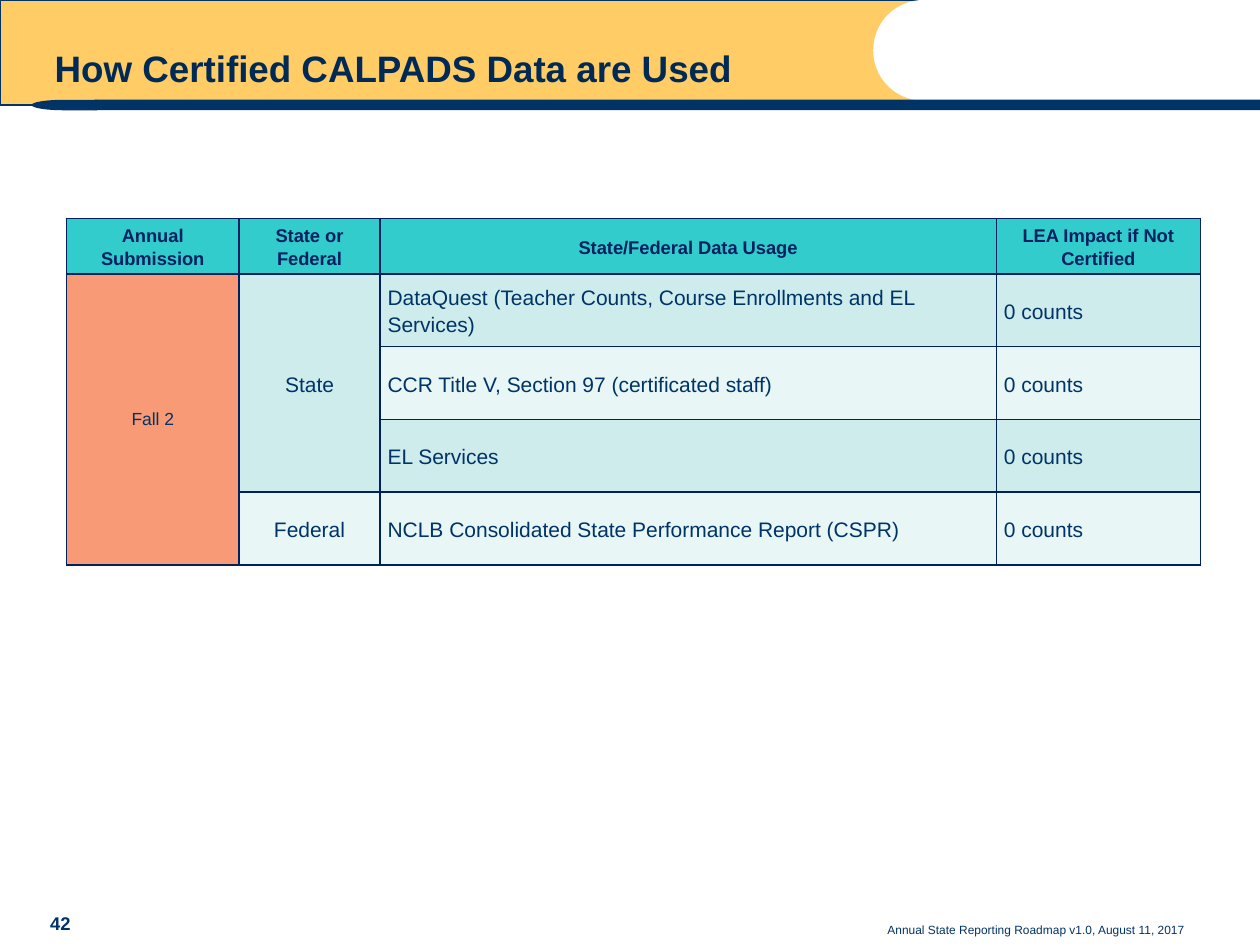
"""Build the slide on how certified CALPADS data are used."""
from dataclasses import dataclass

from lxml.etree import SubElement
from pptx import Presentation
from pptx.dml.color import RGBColor
from pptx.enum.shapes import MSO_SHAPE
from pptx.enum.text import MSO_ANCHOR, MSO_AUTO_SIZE, PP_ALIGN
from pptx.oxml.ns import qn
from pptx.util import Pt

WHITE = RGBColor(0xFF, 0xFF, 0xFF)
GOLD = RGBColor(0xFF, 0xCC, 0x66)
BLUE = RGBColor(0x00, 0x33, 0x66)
TITLE_BLUE = RGBColor(0x00, 0x2A, 0x56)
NAVY = RGBColor(0x00, 0x20, 0x60)
TURQUOISE = RGBColor(0x33, 0xCC, 0xCC)
SALMON = RGBColor(0xF7, 0x9A, 0x75)
AQUA = RGBColor(0xCE, 0xEC, 0xEC)
PALE_AQUA = RGBColor(0xE8, 0xF6, 0xF6)

COLUMN_WIDTHS = (98.6, 80.6, 352.2, 116.6)
ROW_HEIGHTS = (31.7, 41.6, 41.6, 41.6, 41.6)
HEADERS = (
    "Annual Submission",
    "State or Federal",
    "State/Federal Data Usage",
    "LEA Impact if Not Certified",
)
USAGES = (
    "DataQuest (Teacher Counts, Course Enrollments and EL Services)",
    "CCR Title V, Section 97 (certificated staff)",
    "EL Services",
    "NCLB Consolidated State Performance Report (CSPR)",
)
IMPACT = "0 counts"


@dataclass(frozen=True)
class Decoration:
    kind: MSO_SHAPE
    left: float
    top: float
    width: float
    height: float
    fill: RGBColor
    line: RGBColor | None = None
    rotation: float = 0


@dataclass(frozen=True)
class Entry:
    row: int
    column: int
    text: str
    fill: RGBColor
    size: float = 12
    color: RGBColor = BLUE
    bold: bool = False
    align: PP_ALIGN = PP_ALIGN.LEFT
    spacing: float = 1.15
    row_span: int = 1


DECORATIONS = (
    Decoration(MSO_SHAPE.RECTANGLE, 0, 0, 528, 60, GOLD, BLUE),
    Decoration(MSO_SHAPE.OVAL, 499, 0, 57.6, 57.6, WHITE),
    Decoration(MSO_SHAPE.RECTANGLE, 54, 57, 666, 6, BLUE),
    Decoration(MSO_SHAPE.FLOWCHART_DELAY, 18, 57, 37.4, 6, BLUE, rotation=180),
)


def write_text(frame, text: str, *, size: float, color: RGBColor, bold: bool = False,
               align: PP_ALIGN = PP_ALIGN.LEFT, spacing: float = 1.0) -> None:
    para = frame.paragraphs[0]
    para.alignment = align
    para.line_spacing = spacing
    span = para.add_run()
    span.text = text
    span.font.name = "Arial"
    span.font.size = Pt(size)
    span.font.bold = bold
    span.font.color.rgb = color


def draw_decoration(page, item: Decoration) -> None:
    shape = page.shapes.add_shape(
        item.kind, Pt(item.left), Pt(item.top), Pt(item.width), Pt(item.height))
    shape.shadow.inherit = False
    shape.rotation = item.rotation
    shape.fill.solid()
    shape.fill.fore_color.rgb = item.fill
    if item.line is None:
        shape.line.fill.background()
    else:
        shape.line.color.rgb = item.line
        shape.line.width = Pt(0.75)


def add_title(page, text: str) -> None:
    title = page.shapes.title
    page.shapes._spTree.append(title._element)
    title.left, title.top, title.width, title.height = Pt(24), Pt(13.7), Pt(432), Pt(41.8)
    frame = title.text_frame
    frame.word_wrap = True
    frame.auto_size = MSO_AUTO_SIZE.NONE
    frame.vertical_anchor = MSO_ANCHOR.BOTTOM
    write_text(frame, text, size=21, color=TITLE_BLUE, bold=True, spacing=0.9)


def add_footer(page, text: str, left: float, top: float, width: float, height: float,
               **text_format) -> None:
    box = page.shapes.add_textbox(Pt(left), Pt(top), Pt(width), Pt(height))
    frame = box.text_frame
    frame.word_wrap = True
    frame.vertical_anchor = MSO_ANCHOR.BOTTOM
    write_text(frame, text, color=BLUE, **text_format)


def style_cell(cell, fill: RGBColor) -> None:
    properties = cell._tc.get_or_add_tcPr()
    for side in ("a:lnL", "a:lnR", "a:lnT", "a:lnB"):
        line = SubElement(properties, qn(side), w=str(Pt(1)))
        SubElement(SubElement(line, qn("a:solidFill")), qn("a:srgbClr"), val=str(NAVY))
    cell.fill.solid()
    cell.fill.fore_color.rgb = fill
    cell.vertical_anchor = MSO_ANCHOR.MIDDLE
    cell.margin_left = cell.margin_right = Pt(4.3)
    cell.margin_top = cell.margin_bottom = 0


def table_entries() -> list[Entry]:
    center = PP_ALIGN.CENTER
    entries = [
        Entry(0, column, text, TURQUOISE, size=10.5, color=NAVY, bold=True, align=center)
        for column, text in enumerate(HEADERS)
    ]
    entries += [
        Entry(1, 0, "Fall 2", SALMON, size=10, align=center, spacing=1.0, row_span=4),
        Entry(1, 1, "State", AQUA, align=center, row_span=3),
        Entry(4, 1, "Federal", PALE_AQUA, align=center),
    ]
    for row, usage in enumerate(USAGES, start=1):
        fill = AQUA if row % 2 else PALE_AQUA
        entries += [Entry(row, 2, usage, fill), Entry(row, 3, IMPACT, fill)]
    return entries


def add_usage_table(page) -> None:
    table = page.shapes.add_table(
        len(ROW_HEIGHTS), len(COLUMN_WIDTHS), Pt(38), Pt(124.8),
        Pt(sum(COLUMN_WIDTHS)), Pt(sum(ROW_HEIGHTS))).table
    for column, width in zip(table.columns, COLUMN_WIDTHS):
        column.width = Pt(width)
    for row, height in zip(table.rows, ROW_HEIGHTS):
        row.height = Pt(height)
    for entry in table_entries():
        last_row = entry.row + entry.row_span - 1
        for row in range(entry.row, last_row + 1):
            style_cell(table.cell(row, entry.column), entry.fill)
        cell = table.cell(entry.row, entry.column)
        if entry.row_span > 1:
            cell.merge(table.cell(last_row, entry.column))
        write_text(cell.text_frame, entry.text, size=entry.size, color=entry.color,
                   bold=entry.bold, align=entry.align, spacing=entry.spacing)


def main() -> None:
    deck = Presentation()
    deck.slide_width, deck.slide_height = Pt(720), Pt(540)
    page = deck.slides.add_slide(deck.slide_layouts[5])
    for item in DECORATIONS:
        draw_decoration(page, item)
    add_usage_table(page)
    add_title(page, "How Certified CALPADS Data are Used")
    add_footer(page, "Annual State Reporting Roadmap v1.0, August 11, 2017",
               300, 510, 384, 28.8, size=6.8, align=PP_ALIGN.RIGHT)
    add_footer(page, "42", 21.6, 511, 46, 26.6, size=10.5, bold=True)
    deck.save("out.pptx")


if __name__ == "__main__":
    main()
